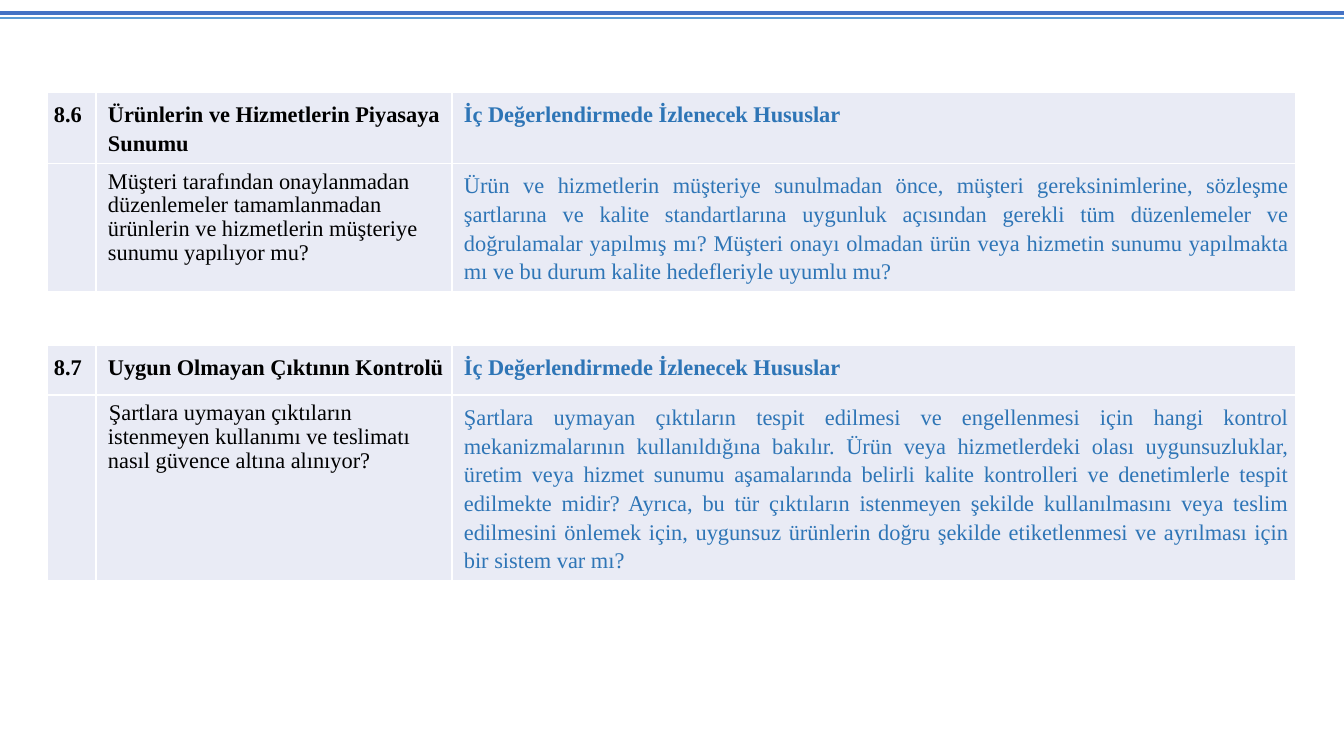
from lxml.etree import SubElement
from pptx import Presentation
from pptx.dml.color import RGBColor
from pptx.enum.shapes import MSO_CONNECTOR as Connector
from pptx.enum.text import PP_ALIGN as Align
from pptx.oxml.ns import qn
from pptx.util import Pt

SLIDE_W, SLIDE_H = 1344, 756
EMU_PER_PX = 914400 / 100.8

RULE_BLUE = RGBColor(0x44, 0x72, 0xC4)
RULE_LIGHT = RGBColor(0x5B, 0x9B, 0xD5)
CELL_FILL = RGBColor(0xE9, 0xEB, 0xF5)
BLACK = RGBColor(0, 0, 0)
GUIDE_BLUE = RGBColor(0x2E, 0x75, 0xB6)

COLUMN_WIDTHS = [49, 356, 844]
GUIDE_TITLE = "İç Değerlendirmede İzlenecek Hususlar"

CLAUSES = [
    {
        "box": (47, 92, 1249, 199),
        "title_height": 71,
        "number": "8.6",
        "title": "Ürünlerin ve Hizmetlerin Piyasaya Sunumu",
        "question": "Müşteri tarafından onaylanmadan düzenlemeler tamamlanmadan "
                    "ürünlerin ve hizmetlerin müşteriye sunumu yapılıyor mu?",
        "question_indent": 0,
        "guide": "Ürün ve hizmetlerin müşteriye sunulmadan önce, müşteri "
                 "gereksinimlerine, sözleşme şartlarına ve kalite standartlarına "
                 "uygunluk açısından gerekli tüm düzenlemeler ve doğrulamalar "
                 "yapılmış mı? Müşteri onayı olmadan ürün veya hizmetin sunumu "
                 "yapılmakta mı ve bu durum kalite hedefleriyle uyumlu mu?",
    },
    {
        "box": (47, 345, 1249, 236),
        "title_height": 50,
        "number": "8.7",
        "title": "Uygun Olmayan Çıktının Kontrolü",
        "question": "Şartlara uymayan çıktıların istenmeyen kullanımı ve teslimatı "
                    "nasıl güvence altına alınıyor?",
        "question_indent": 1,
        "guide": "Şartlara uymayan çıktıların tespit edilmesi ve engellenmesi için "
                 "hangi kontrol mekanizmalarının kullanıldığına bakılır. Ürün veya "
                 "hizmetlerdeki olası uygunsuzluklar, üretim veya hizmet sunumu "
                 "aşamalarında belirli kalite kontrolleri ve denetimlerle tespit "
                 "edilmekte midir? Ayrıca, bu tür çıktıların istenmeyen şekilde "
                 "kullanılmasını veya teslim edilmesini önlemek için, uygunsuz "
                 "ürünlerin doğru şekilde etiketlenmesi ve ayrılması için bir "
                 "sistem var mı?",
    },
]


def px(length):
    return round(length * EMU_PER_PX)


def set_all(target, values):
    for name, value in values.items():
        setattr(target, name, value)


def add_header_rules(slide, box):
    left, top, width, height = box
    for y, color, weight in [(top + height, RULE_LIGHT, 1), (top, RULE_BLUE, 2.25)]:
        rule = slide.shapes.add_connector(
            Connector.STRAIGHT, px(left), px(y), px(left + width), px(y))
        rule.line.color.rgb = color
        rule.line.width = Pt(weight)
        SubElement(rule._element.spPr, qn("a:effectLst"))


def style_cell(cell):
    cell_format = cell._tc.get_or_add_tcPr()
    for side in ("lnL", "lnR", "lnT", "lnB"):
        border = SubElement(cell_format, qn(f"a:{side}"), w=str(Pt(1)))
        border_fill = SubElement(border, qn("a:solidFill"))
        SubElement(border_fill, qn("a:srgbClr"), val="FFFFFF")
    cell.fill.solid()
    cell.fill.fore_color.rgb = CELL_FILL
    set_all(cell, {f"margin_{side}": px(7) for side in ("left", "right", "top", "bottom")})


def write_cell(cell, text, color=BLACK, bold=False, spacing=1.15,
               align=Align.LEFT, margin=5, indent=0):
    paragraph = cell.text_frame.paragraphs[0]
    set_all(paragraph, {"alignment": align, "line_spacing": spacing})
    paragraph_format = paragraph._p.get_or_add_pPr()
    paragraph_format.set("marL", str(px(margin)))
    paragraph_format.set("indent", str(px(indent)))
    run = paragraph.add_run()
    run.text = text
    set_all(run.font, {"name": "Times New Roman", "size": Pt(16), "bold": bold})
    run.font.color.rgb = color


def add_clause_table(slide, box, clause):
    height = box[3]
    table = slide.shapes.add_table(2, 3, *map(px, box)).table
    set_all(table, {"first_row": False, "horz_banding": False})
    for column, column_width in zip(table.columns, COLUMN_WIDTHS):
        column.width = px(column_width)
    title_height = clause["title_height"]
    for row, row_height in zip(table.rows, [title_height, height - title_height]):
        row.height = px(row_height)
    for cell in table.iter_cells():
        style_cell(cell)

    guide_format = {"color": GUIDE_BLUE, "align": Align.JUSTIFY}
    write_cell(table.cell(0, 0), clause["number"], bold=True, margin=0)
    write_cell(table.cell(0, 1), clause["title"], bold=True)
    write_cell(table.cell(0, 2), GUIDE_TITLE, bold=True, **guide_format)
    write_cell(table.cell(1, 1), clause["question"], spacing=0.95,
               indent=clause["question_indent"])
    write_cell(table.cell(1, 2), clause["guide"], **guide_format)


def main():
    deck = Presentation()
    set_all(deck, {"slide_width": px(SLIDE_W), "slide_height": px(SLIDE_H)})
    slide = deck.slides.add_slide(deck.slide_layouts[6])
    add_header_rules(slide, (0, 13, SLIDE_W, 5))
    for clause in CLAUSES:
        add_clause_table(slide, clause["box"], clause)
    deck.save("out.pptx")


if __name__ == "__main__":
    main()
